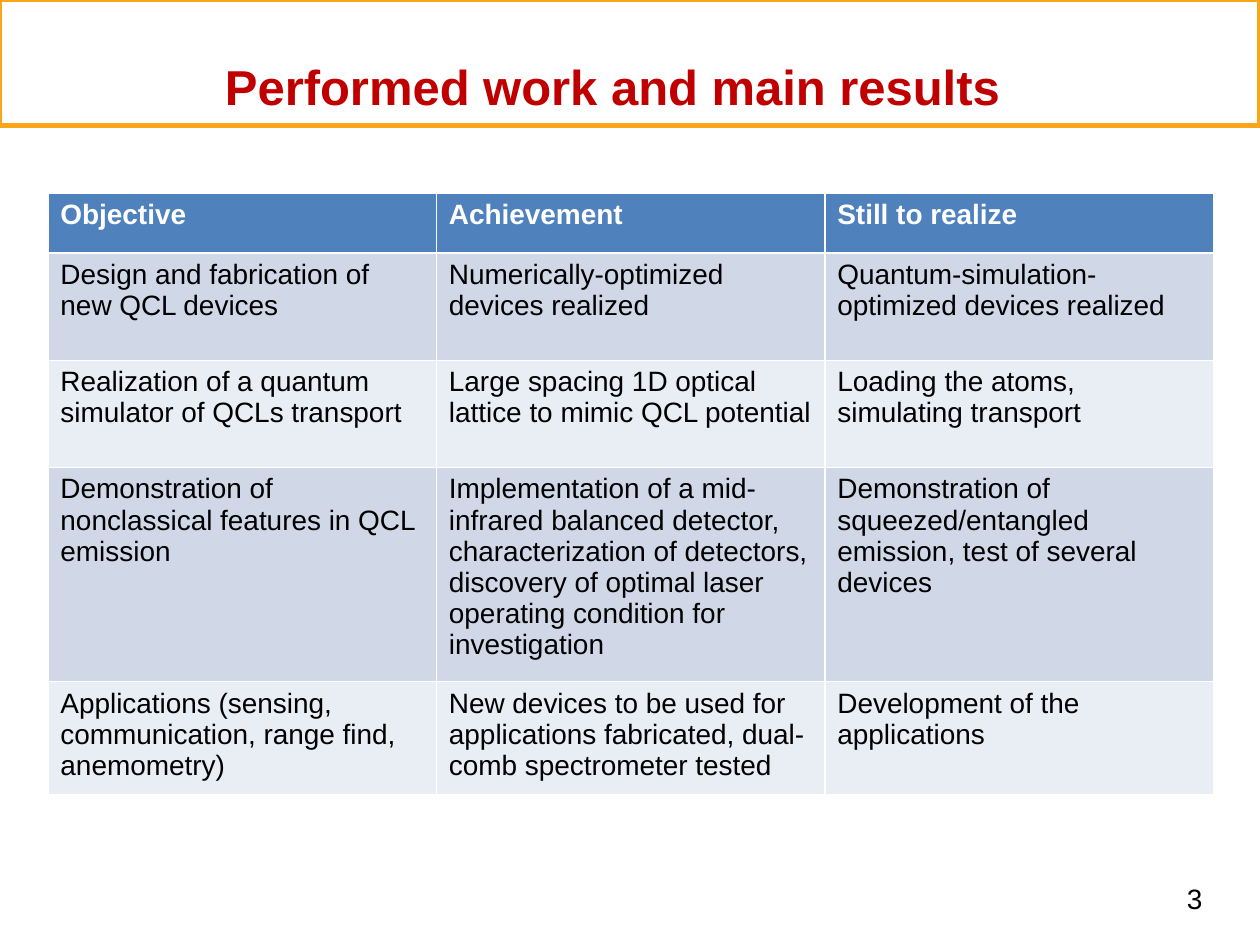
from math import cos, pi, sin

from pptx import Presentation
from pptx import util as u
from pptx.dml.color import RGBColor
from pptx.enum import text

TITLE = "Performed work and main results"
PAGE_NUMBER = "3"
ROWS = [
    ("Objective", "Achievement", "Still to realize"),
    ("Design and fabrication of new QCL devices",
     "Numerically-optimized devices realized",
     "Quantum-simulation-optimized devices realized"),
    ("Realization of a quantum simulator of QCLs transport",
     "Large spacing 1D optical lattice to mimic QCL potential",
     "Loading the atoms, simulating transport"),
    ("Demonstration of nonclassical features in QCL emission",
     "Implementation of a mid-infrared balanced detector, characterization of "
     "detectors, discovery of optimal laser operating condition for investigation",
     "Demonstration of squeezed/entangled emission, test of several devices"),
    ("Applications (sensing, communication, range find, anemometry)",
     "New devices to be used for applications fabricated, dual-comb spectrometer tested",
     "Development of the applications"),
]

FONT = "Arial"
ORANGE = RGBColor(0xFA, 0xA6, 0x1A)
RED = RGBColor(0xC0, 0x00, 0x00)
BLACK = RGBColor(0x00, 0x00, 0x00)
WHITE = RGBColor(0xFF, 0xFF, 0xFF)
HEADER_BLUE = RGBColor(0x4F, 0x81, 0xBD)
BANDS = [RGBColor(0xE9, 0xED, 0xF4), RGBColor(0xD0, 0xD8, 0xE8)]

HEADER_HEIGHT, BODY_HEIGHT = 0.48, 0.85
TABLE_LEFT, TABLE_TOP, TABLE_WIDTH = 0.38, 1.53, 9.25


def style(frame, size, color, bold=False):
    for paragraph in frame.paragraphs:
        for span in paragraph.runs:
            span.font.name = FONT
            span.font.size = u.Pt(size)
            span.font.bold = bold
            span.font.color.rgb = color


def add_title_frame(page, left, top, right, bottom, rx, ry, steps=12):
    """Draw an outline whose corners are quarter ellipses of radii rx and ry."""
    centers = [(right - rx, bottom - ry), (left + rx, bottom - ry),
               (left + rx, top + ry), (right - rx, top + ry)]
    points = []
    for quarter, (x, y) in enumerate(centers):
        for step in range(steps + 1):
            angle = (quarter + step / steps) * pi / 2
            points.append((x + rx * cos(angle), y + ry * sin(angle)))
    builder = page.shapes.build_freeform(*points[0], scale=u.Inches(1))
    builder.add_line_segments(points[1:], close=True)
    frame = builder.convert_to_shape()
    frame.shadow.inherit = False
    frame.fill.background()
    frame.line.color.rgb = ORANGE
    frame.line.width = u.Pt(2.83)


def add_text(page, content, area, align, size, color, bold=False):
    box = page.shapes.add_textbox(*map(u.Inches, area))
    box.text_frame.word_wrap = True
    box.text_frame.text = content
    box.text_frame.paragraphs[0].alignment = align
    style(box.text_frame, size, color, bold)
    return box.text_frame


def add_results_table(page):
    heights = [HEADER_HEIGHT] + [BODY_HEIGHT] * (len(ROWS) - 1)
    area = (TABLE_LEFT, TABLE_TOP, TABLE_WIDTH, sum(heights))
    table = page.shapes.add_table(len(ROWS), len(ROWS[0]), *map(u.Inches, area)).table
    for r, (row, height) in enumerate(zip(ROWS, heights)):
        table.rows[r].height = u.Inches(height)
        header = r == 0
        for c, content in enumerate(row):
            cell = table.cell(r, c)
            cell.text_frame.text = content
            cell.fill.solid()
            cell.fill.fore_color.rgb = HEADER_BLUE if header else BANDS[r % 2]
            style(cell.text_frame, 16, WHITE if header else BLACK, header)


def main():
    deck = Presentation()
    deck.slide_width, deck.slide_height = u.Inches(10), u.Inches(7.5)
    page = deck.slides.add_slide(deck.slide_layouts[6])

    add_title_frame(page, 0.07, 0.29, 9.85, 1.14, rx=0.23, ry=0.14)
    title = add_text(page, TITLE, (1.75, 0.3, 6.22, 0.82),
                     text.PP_ALIGN.CENTER, 28, RED, bold=True)
    title.vertical_anchor = text.MSO_ANCHOR.MIDDLE
    title.margin_left = title.margin_right = title.margin_top = title.margin_bottom = 0
    title.paragraphs[0].line_spacing = 0.9

    add_text(page, PAGE_NUMBER, (7.39, 6.95, 2.25, 0.4),
             text.PP_ALIGN.RIGHT, 16, BLACK)
    add_results_table(page)
    deck.save("out.pptx")


if __name__ == "__main__":
    main()
